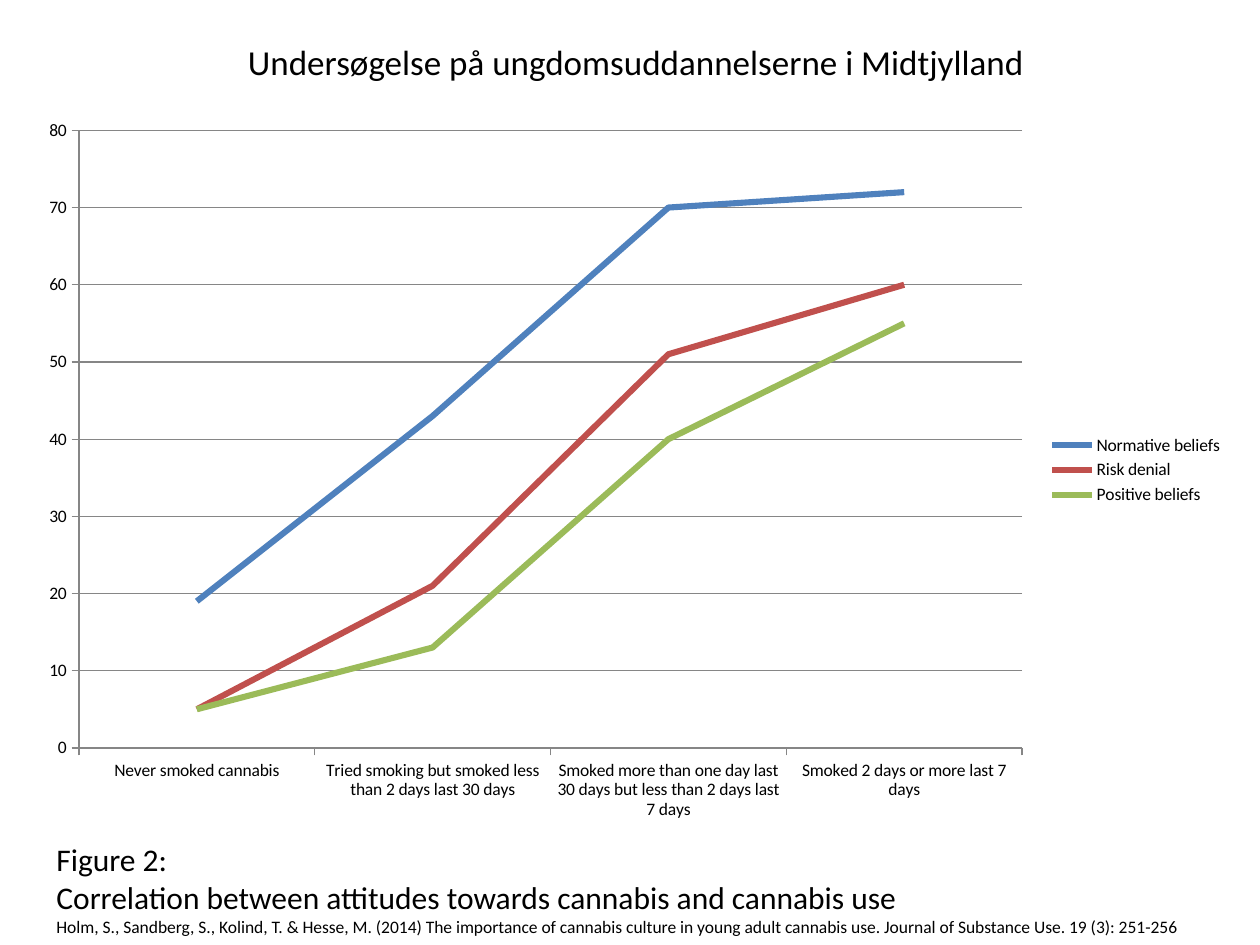
from pptx import Presentation
from pptx.chart.data import CategoryChartData
from pptx.dml.color import RGBColor
from pptx.enum.chart import XL_CHART_TYPE, XL_LEGEND_POSITION, XL_MARKER_STYLE, XL_TICK_MARK
from pptx.enum.text import MSO_ANCHOR, MSO_AUTO_SIZE, PP_ALIGN
from pptx.util import Emu, Pt

LINE_CHART = XL_CHART_TYPE.LINE
LEGEND_RIGHT = XL_LEGEND_POSITION.RIGHT
NO_MARKER = XL_MARKER_STYLE.NONE
TICK_OUT, TICK_NONE = XL_TICK_MARK.OUTSIDE, XL_TICK_MARK.NONE
TOP = MSO_ANCHOR.TOP
GROW = MSO_AUTO_SIZE.SHAPE_TO_FIT_TEXT
LEFT, CENTER = PP_ALIGN.LEFT, PP_ALIGN.CENTER

BLACK = RGBColor(0x00, 0x00, 0x00)
GRAY = RGBColor(0x86, 0x86, 0x86)
BLUE = RGBColor(0x4F, 0x81, 0xBD)
RED = RGBColor(0xC0, 0x50, 0x4D)
GREEN = RGBColor(0x9B, 0xBB, 0x59)

PX = 914400 / 126
TITLE_ONLY = 5

TITLE = "Undersøgelse på ungdomsuddannelserne i Midtjylland "
CAPTION = [
    ("Figure 2:", 18),
    ("Correlation between attitudes towards cannabis and cannabis use", 18),
    ("Holm, S., Sandberg, S., Kolind, T. & Hesse, M. (2014) The importance of "
     "cannabis culture in young adult cannabis use. Journal of Substance Use. "
     "19 (3): 251-256", 10),
]
CATEGORIES = [
    "Never smoked cannabis",
    "Tried smoking but smoked less than 2 days last 30 days",
    "Smoked more than one day last 30 days but less than 2 days last 7 days",
    "Smoked 2 days or more last 7 days",
]
SERIES = [
    ("Normative beliefs", (19, 43, 70, 72), BLUE),
    ("Risk denial", (5, 21, 51, 60), RED),
    ("Positive beliefs", (5, 13, 40, 55), GREEN),
]


def px(*lengths):
    return [Emu(round(length * PX)) for length in lengths]


def apply(target, values):
    for name, value in values.items():
        setattr(target, name, value)


class SlideBuilder:
    """Holds the text style and the current slide."""

    font_name = "Calibri"
    text_color = BLACK

    def __init__(self, page):
        self.page = page

    def style_font(self, font, size):
        apply(font, {"name": self.font_name, "size": Pt(size), "bold": False})
        font.color.rgb = self.text_color

    def fill_text(self, frame, lines, align, wrap):
        apply(frame, {"word_wrap": wrap, "auto_size": GROW, "vertical_anchor": TOP})
        for index, (text, size) in enumerate(lines):
            para = frame.paragraphs[0] if index == 0 else frame.add_paragraph()
            para.alignment = align
            span = para.add_run()
            span.text = text
            self.style_font(span.font, size)

    def title(self, text, size, left, top, width, height):
        box = self.page.shapes.title
        apply(box, dict(zip(("left", "top", "width", "height"),
                            px(left, top, width, height))))
        self.fill_text(box.text_frame, [(text, size)], CENTER, True)

    def text(self, lines, left, top, width, height):
        box = self.page.shapes.add_textbox(*px(left, top, width, height))
        self.fill_text(box.text_frame, lines, LEFT, False)

    def line_chart(self, categories, series, left, top, width, height):
        data = CategoryChartData()
        data.categories = categories
        for name, values, _ in series:
            data.add_series(name, values)
        chart = self.page.shapes.add_chart(
            LINE_CHART, *px(left, top, width, height), data).chart
        self.style_font(chart.font, 10)
        apply(chart, {"has_title": False, "has_legend": True})
        apply(chart.legend, {"position": LEGEND_RIGHT, "include_in_layout": False})
        chart.plots[0].vary_by_categories = False

        # Axes and gridlines
        apply(chart.value_axis, {"minimum_scale": 0, "maximum_scale": 80,
                                 "major_unit": 10, "has_major_gridlines": True})
        for axis in (chart.category_axis, chart.value_axis):
            apply(axis, {"major_tick_mark": TICK_OUT, "minor_tick_mark": TICK_NONE})
            self.style_line(axis.format.line, GRAY, 0.75)
        self.style_line(chart.value_axis.major_gridlines.format.line, GRAY, 0.75)

        # Series lines
        for plotted, (_, _, color) in zip(chart.plots[0].series, series):
            plotted.smooth = False
            plotted.marker.style = NO_MARKER
            self.style_line(plotted.format.line, color, 3.5)

    def style_line(self, line, color, width):
        line.color.rgb = color
        line.width = Pt(width)


def main():
    deck = Presentation()
    deck.slide_width, deck.slide_height = px(1260, 945)
    page = deck.slides.add_slide(deck.slide_layouts[TITLE_ONLY])
    builder = SlideBuilder(page)

    # Heading, chart and caption
    builder.title(TITLE, 20, 44, 34, 1192, 55)
    builder.line_chart(CATEGORIES, SERIES, 25, 106, 1211, 728)
    builder.text(CAPTION, 44, 834, 1164, 149)

    deck.save("out.pptx")


if __name__ == "__main__":
    main()
